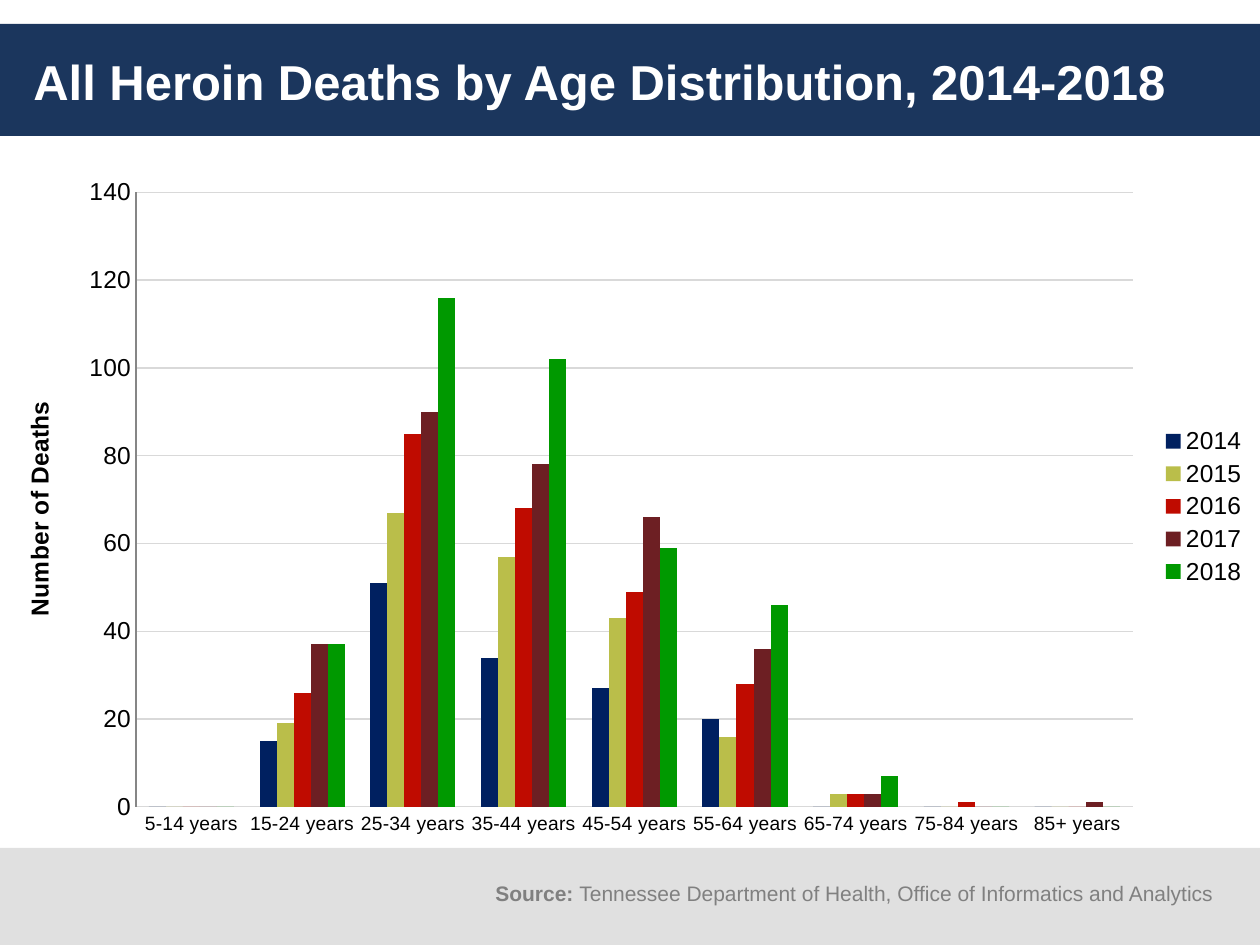
from lxml.etree import SubElement
from pptx import Presentation
from pptx.chart.data import CategoryChartData
from pptx.dml.color import RGBColor
from pptx.enum.chart import XL_CHART_TYPE, XL_LEGEND_POSITION, XL_TICK_MARK
from pptx.enum.shapes import MSO_SHAPE
from pptx.enum.text import MSO_ANCHOR
from pptx.oxml.ns import qn
from pptx.util import Pt

PX = 7257.6  # EMU per px at 126 px to the inch
FONT = "Arial"
COLORS = {"navy": "1B365D", "footer": "E0E0E0", "white": "FFFFFF", "black": "000000",
          "source": "808080", "grid": "D9D9D9", "axis": "868686"}
AGES = ["5-14 years", "15-24 years", "25-34 years", "35-44 years", "45-54 years",
        "55-64 years", "65-74 years", "75-84 years", "85+ years"]
DEATHS = {
    "2014": ("002060", [0, 15, 51, 34, 27, 20, 0, 0, 0]),
    "2015": ("BABE4A", [0, 19, 67, 57, 43, 16, 3, 0, 0]),
    "2016": ("BF0B00", [0, 26, 85, 68, 49, 28, 3, 1, 0]),
    "2017": ("6D1F23", [0, 37, 90, 78, 66, 36, 3, 0, 1]),
    "2018": ("009900", [0, 37, 116, 102, 59, 46, 7, 0, 0]),
}


def style(font, size, color, bold=False):
    font.name, font.size, font.bold = FONT, Pt(size), bold
    font.color.rgb = RGBColor.from_string(COLORS[color])


def set_layout(parent, index, settings):
    for old_layout in parent.findall(qn("c:layout")):
        parent.remove(old_layout)
    layout = SubElement(parent, qn("c:layout"))
    manual = SubElement(layout, qn("c:manualLayout"))
    for tag, value in settings.items():
        SubElement(manual, qn(f"c:{tag}")).set("val", str(value))
    parent.insert(index, layout)


presentation = Presentation()
presentation.slide_width, presentation.slide_height = int(1260 * PX), int(945 * PX)
slide = presentation.slides.add_slide(presentation.slide_layouts[6])

# Title and footer bands
for top, height, color in [(24, 112, "navy"), (848, 97, "footer")]:
    band = slide.shapes.add_shape(MSO_SHAPE.RECTANGLE, 0, int(top * PX), int(1260 * PX), int(height * PX))
    band.shadow.inherit = False
    band.fill.solid()
    band.fill.fore_color.rgb = RGBColor.from_string(COLORS[color])
    band.line.fill.background()

# Title and source line
for box, anchor, size, color, parts in [
    ((21, 24, 1218, 113), MSO_ANCHOR.MIDDLE, 28, "white",
     [("All Heroin Deaths by Age Distribution, 2014-2018", True)]),
    ((483, 874, 756, 38), MSO_ANCHOR.TOP, 12, "source",
     [("Source: ", True),
      ("Tennessee Department of Health, Office of Informatics and Analytics", False)]),
]:
    text_frame = slide.shapes.add_textbox(*[int(length * PX) for length in box]).text_frame
    text_frame.word_wrap = True
    text_frame.vertical_anchor = anchor
    for text, bold in parts:
        run = text_frame.paragraphs[0].add_run()
        run.text = text
        style(run.font, size, color, bold)

# Column chart
chart_data = CategoryChartData()
chart_data.categories = AGES
for year, (color, values) in DEATHS.items():
    chart_data.add_series(year, values)
chart = slide.shapes.add_chart(XL_CHART_TYPE.COLUMN_CLUSTERED, 0, int(165 * PX), int(1260 * PX),
                               int(683 * PX), chart_data).chart
style(chart.font, 10, "black")
chart.has_title = False
plot = chart.plots[0]
plot.vary_by_categories = False
plot.gap_width = 150
plot.overlap = 0
for series, (color, values) in zip(plot.series, DEATHS.values()):
    series.format.fill.solid()
    series.format.fill.fore_color.rgb = RGBColor.from_string(color)

# Legend
chart.has_legend = True
chart.legend.position = XL_LEGEND_POSITION.RIGHT
chart.legend.include_in_layout = False
style(chart.legend.font, 14, "black")

# Axes
value_axis = chart.value_axis
for axis, size, color in [(chart.category_axis, 11, "grid"), (value_axis, 14, "axis")]:
    axis.major_tick_mark = axis.minor_tick_mark = XL_TICK_MARK.NONE
    style(axis.tick_labels.font, size, "black")
    axis.format.line.width = Pt(0.75)
    axis.format.line.color.rgb = RGBColor.from_string(COLORS[color])
value_axis.minimum_scale, value_axis.maximum_scale, value_axis.major_unit = 0, 140, 20
value_axis.has_major_gridlines = True
gridline = value_axis.major_gridlines.format.line
gridline.width = Pt(0.75)
gridline.color.rgb = RGBColor.from_string(COLORS["grid"])

# Value axis title
axis_title = value_axis.axis_title
title_frame = axis_title.text_frame
title_frame.text = "Number of Deaths"
style(title_frame.paragraphs[0].runs[0].font, 14, "black", True)
body_properties = title_frame._txBody.find(qn("a:bodyPr"))
body_properties.set("rot", "-5400000")
body_properties.set("vert", "horz")

# Positions inside the chart, as shares of its size
set_layout(axis_title._element, 1, {"xMode": "edge", "yMode": "edge", "x": 0.015, "y": 0.34})
set_layout(chart._chartSpace.chart.plotArea, 0,
           {"layoutTarget": "inner", "xMode": "edge", "yMode": "edge",
            "x": 0.108, "y": 0.04, "w": 0.791, "h": 0.9})

presentation.save("out.pptx")
